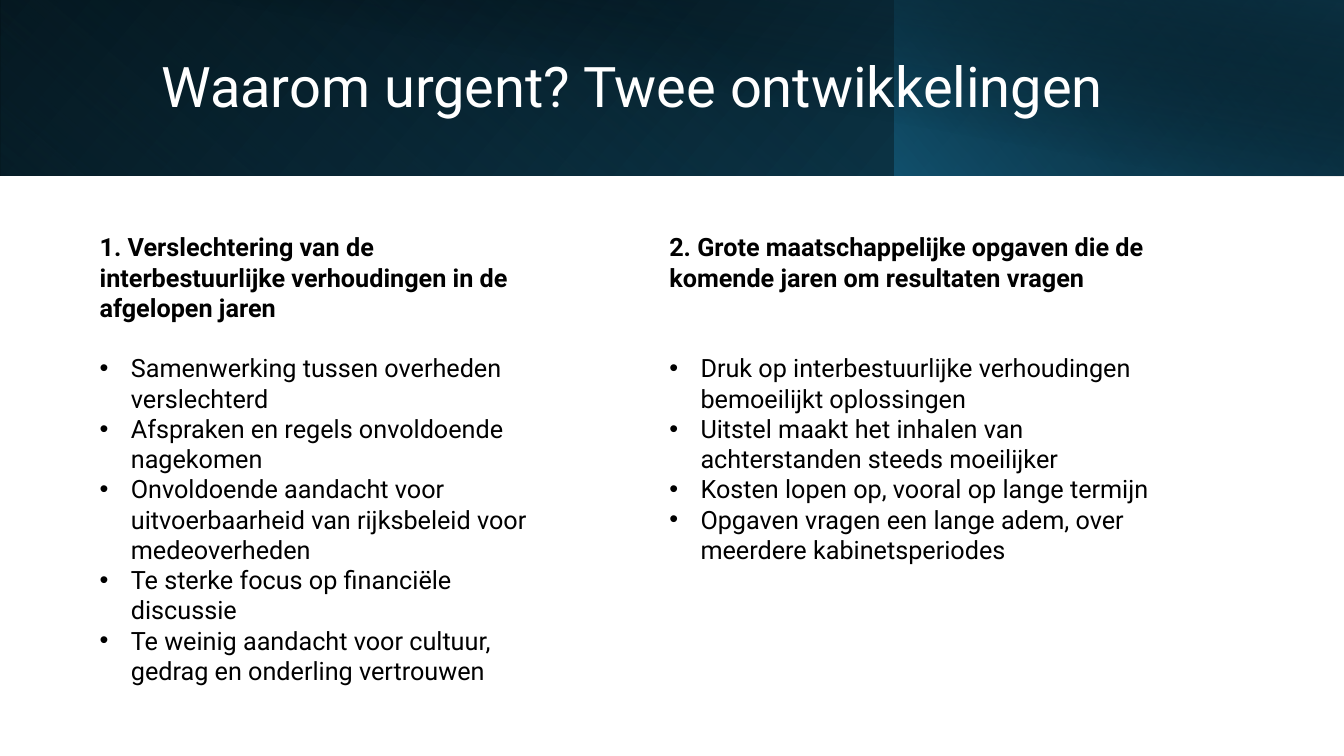
import pptx
import pptx.util
import pptx.dml.color
import pptx.enum.shapes
import pptx.enum.text
import pptx.oxml
import pptx.oxml.ns

Inches, Pt = pptx.util.Inches, pptx.util.Pt

FONT = "Roboto"
WHITE, BLACK = "FFFFFF", "000000"
TITLE = "Waarom urgent? Twee ontwikkelingen"

# left, top, width, height, rotation, mirrored, angle, stops (position, colour, opacity %)
BANNER_LAYERS = [
    (0, 0, 13.33, 1.74, 0, True, 140, [(0, "000000", 100), (100, "104862", 100)]),
    (0, 0, 8.88, 1.74, 180, True, 230, [(20, "156082", 0), (100, "0B3041", 55)]),
    (8.87, 0, 4.46, 1.74, 0, True, 220, [(0, "156082", 66), (100, "000000", 30)]),
    (0.5, 0, 12.83, 1.75, 0, False, 280, [(50, "000000", 0), (99, "0B3041", 52)]),
]

# left, width, height, gap under the heading in points, heading, bullets
COLUMN_TOP = 2.25
COLUMNS = [
    (0.89, 4.77, 4.7, 21.6,
     "1. Verslechtering van de interbestuurlijke verhoudingen in de afgelopen jaren",
     ["Samenwerking tussen overheden verslechterd",
      "Afspraken en regels onvoldoende nagekomen",
      "Onvoldoende aandacht voor uitvoerbaarheid van rijksbeleid voor medeoverheden",
      "Te sterke focus op financiële discussie",
      "Te weinig aandacht voor cultuur, gedrag en onderling vertrouwen"]),
    (6.54, 5.17, 4.04, 43.2,
     "2. Grote maatschappelijke opgaven die de komende jaren om resultaten vragen",
     ["Druk op interbestuurlijke verhoudingen bemoeilijkt oplossingen",
      "Uitstel maakt het inhalen van achterstanden steeds moeilijker",
      "Kosten lopen op, vooral op lange termijn",
      "Opgaven vragen een lange adem, over meerdere kabinetsperiodes"]),
]
BULLET_INDENT = 0.31


def rgb(colour):
    return pptx.dml.color.RGBColor.from_string(colour)


def write(paragraph, text, size=18, colour=BLACK, bold=False, bullet=False, before=0):
    if bullet:
        properties = paragraph._p.get_or_add_pPr()
        properties.set("marL", str(Inches(BULLET_INDENT)))
        properties.set("indent", str(-Inches(BULLET_INDENT)))
        for tag, name, value in (("a:buFont", "typeface", "Arial"), ("a:buChar", "char", "•")):
            element = pptx.oxml.xmlchemy.OxmlElement(tag)
            element.set(name, value)
            properties.append(element)
    if before:
        paragraph.space_before = Pt(before)
    run = paragraph.add_run()
    run.text = text
    run.font.name = FONT
    run.font.size = Pt(size)
    run.font.bold = bold
    run.font.color.rgb = rgb(colour)


def add_banner_layer(slide, left, top, width, height, rotation, mirrored, angle, stops):
    shape = slide.shapes.add_shape(
        pptx.enum.shapes.MSO_SHAPE.RECTANGLE,
        Inches(left), Inches(top), Inches(width), Inches(height))
    shape.shadow.inherit = False
    shape.line.fill.background()
    shape.rotation = rotation
    properties = shape._element.spPr
    if mirrored:
        properties.find(pptx.oxml.ns.qn("a:xfrm")).set("flipH", "1")
    shape.fill.gradient()
    shape.fill.gradient_angle = 360 - angle
    for stop, (position, colour, opacity) in zip(shape.fill.gradient_stops, stops):
        stop.position = position / 100
        stop.color.rgb = rgb(colour)
    colour_elements = properties.iter(pptx.oxml.ns.qn("a:srgbClr"))
    for element, (position, colour, opacity) in zip(list(colour_elements), stops):
        if opacity < 100:
            alpha = pptx.oxml.xmlchemy.OxmlElement("a:alpha")
            alpha.set("val", str(opacity * 1000))
            element.append(alpha)


def add_title(slide):
    title = slide.shapes.title
    title.left, title.top = Inches(1.5), Inches(0.32)
    title.width, title.height = Inches(10.82), Inches(1.13)
    frame = title.text_frame
    frame.word_wrap = True
    frame.vertical_anchor = pptx.enum.text.MSO_ANCHOR.MIDDLE
    paragraph = frame.paragraphs[0]
    paragraph.alignment = pptx.enum.text.PP_ALIGN.LEFT
    paragraph.line_spacing = 0.9
    write(paragraph, TITLE, size=40, colour=WHITE)
    slide.shapes._spTree.append(title._element)  # bring in front of the banner


def add_column(slide, left, width, height, gap, heading, bullets):
    box = slide.shapes.add_textbox(
        Inches(left), Inches(COLUMN_TOP), Inches(width), Inches(height))
    frame = box.text_frame
    frame.word_wrap = True
    write(frame.paragraphs[0], heading, bold=True)
    for index, bullet in enumerate(bullets):
        write(frame.add_paragraph(), bullet, bullet=True, before=0 if index else gap)


def main():
    presentation = pptx.Presentation()
    presentation.slide_width, presentation.slide_height = Inches(13.33), Inches(7.5)
    slide = presentation.slides.add_slide(presentation.slide_layouts[5])
    for layer in BANNER_LAYERS:
        add_banner_layer(slide, *layer)
    add_title(slide)
    for column in COLUMNS:
        add_column(slide, *column)
    presentation.save("out.pptx")


if __name__ == "__main__":
    main()
